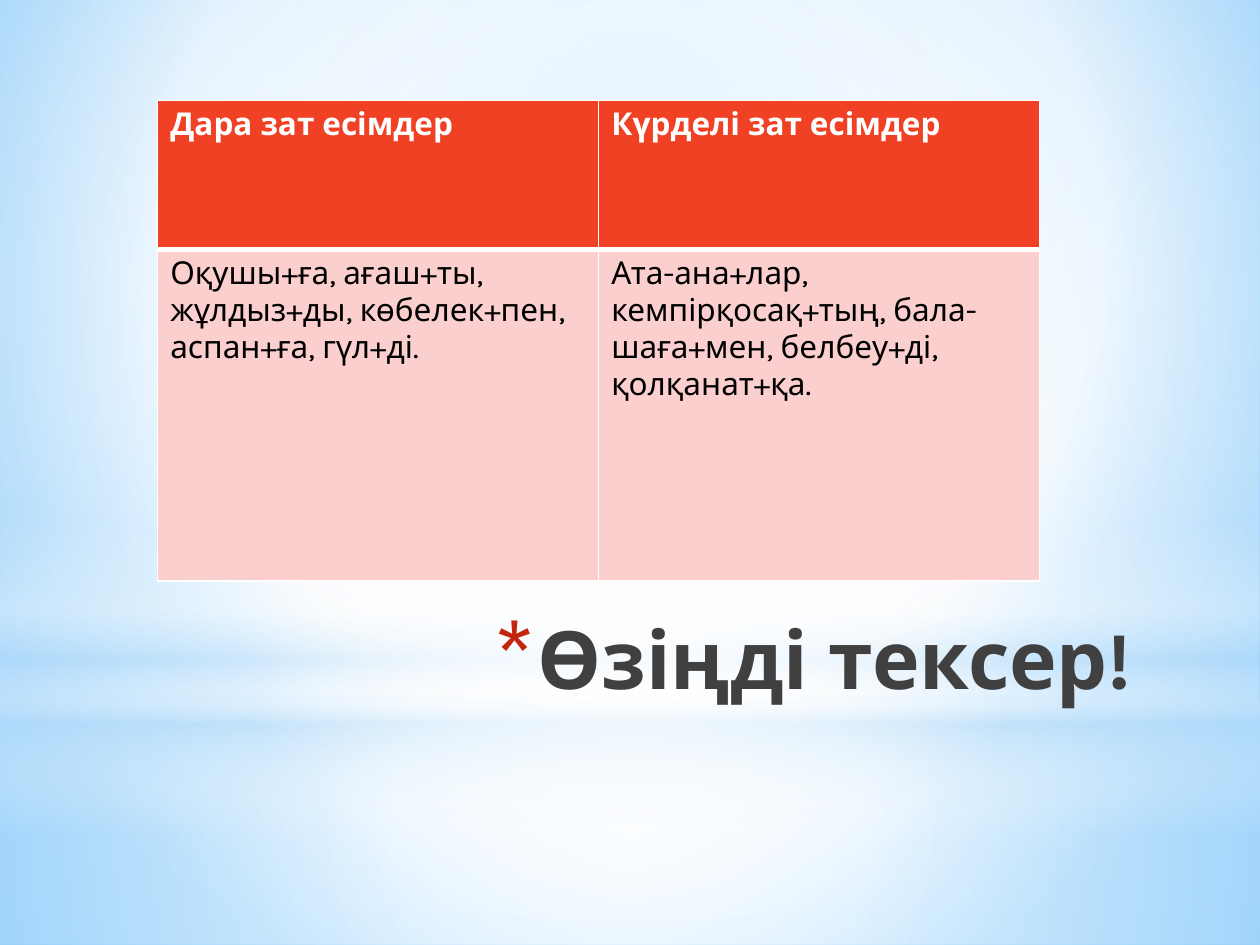
from lxml import etree
from pptx import Presentation
from pptx.dml.color import RGBColor
from pptx.enum import shapes, text
from pptx.oxml import parse_xml
from pptx.oxml.ns import nsdecls, qn
from pptx.util import Cm, Pt

TITLE = "Өзіңді тексер!"
ROWS = [
    ("Дара зат есімдер", "Күрделі зат есімдер"),
    ("Оқушы+ға, ағаш+ты, жұлдыз+ды, көбелек+пен, аспан+ға, гүл+ді.",
     "Ата-ана+лар, кемпірқосақ+тың, бала-шаға+мен, белбеу+ді, қолқанат+қа."),
]
THEME = {
    "font": "Karla", "title_size": 46, "table_size": 18,
    "title": "404040", "bullet": "C3260C", "border": "FFFFFF",
    "row_fill": ("F14124", "FACFCD"), "row_text": ("FFFFFF", "000000"),
}
CENTRE = (50, 50, 50, 50)
# Stops are (position %, colour, opacity %); no focus means a vertical gradient
BACKGROUND = [(0, "9ED5FF", 100), (60, "FFFFFF", 100), (100, "5BB9FF", 100)]
RECTANGLE, OVAL = shapes.MSO_SHAPE.RECTANGLE, shapes.MSO_SHAPE.OVAL
# Full-width bands: shape, top and height in cm, stops, focus
BANDS = [
    (RECTANGLE, 14.17, 4.88,
     [(0, "FFFFFF", 91), (37, "FFFFFF", 76), (100, "B4DCFA", 79)], CENTRE),
    (RECTANGLE, 0, 14.17,
     [(0, "FFFFFF", 89), (48, "FFFFFF", 62), (100, "B4DCFA", 79)], CENTRE),
    (RECTANGLE, 10.46, 6.35,
     [(0, "FFFFFF", 0), (29, "FFFFFF", 30), (45, "B4DCFA", 40),
      (55, "FFFFFF", 26), (65, "B4DCFA", 60), (100, "FFFFFF", 0)], None),
    (OVAL, 4.45, 14.17, [(0, "FFFFFF", 100), (56, "FFFFFF", 0)], CENTRE),
]


def set_gradient(fill, holder, stops, focus):
    """Fill the properties element holder with a gradient."""
    fill.solid()
    stop_xml = "".join(
        f'<a:gs pos="{position * 1000}"><a:srgbClr val="{colour}">'
        f'<a:alpha val="{opacity * 1000}"/></a:srgbClr></a:gs>'
        for position, colour, opacity in stops)
    if focus:
        edges = " ".join(f'{side}="{value * 1000}"' for side, value in zip("ltrb", focus))
        direction = f'<a:path path="circle"><a:fillToRect {edges}/></a:path>'
    else:
        direction = '<a:lin ang="5400000" scaled="0"/>'
    gradient = parse_xml(f'<a:gradFill {nsdecls("a")} rotWithShape="1">'
                         f'<a:gsLst>{stop_xml}</a:gsLst>{direction}</a:gradFill>')
    holder.replace(holder.find(qn("a:solidFill")), gradient)


def add_span(para, words, size, colour, bold):
    span = para.add_run()
    span.text = words
    span.font.name = THEME["font"]
    span.font.size = Pt(size)
    span.font.bold = bold
    span.font.color.rgb = RGBColor.from_string(colour)


def add_bands(page, width):
    for kind, top, height, stops, focus in BANDS:
        band = page.shapes.add_shape(kind, 0, Cm(top), width, Cm(height))
        band.shadow.inherit = False
        set_gradient(band.fill, band.element.spPr, stops, focus)
        band.line.fill.background()


def format_title(title):
    title.left, title.top, title.width, title.height = Cm(4.98), Cm(12.14), Cm(18.08), Cm(3.18)
    frame = title.text_frame
    frame.word_wrap = True
    frame.auto_size = text.MSO_AUTO_SIZE.NONE
    frame.vertical_anchor = text.MSO_ANCHOR.TOP
    para = frame.paragraphs[0]
    para.alignment = text.PP_ALIGN.RIGHT
    properties = para._p.get_or_add_pPr()
    properties.set("marL", str(Cm(0.89)))
    properties.set("indent", str(Cm(-0.89)))
    colour = etree.SubElement(properties, qn("a:buClr"))
    etree.SubElement(colour, qn("a:srgbClr"), val=THEME["bullet"])
    etree.SubElement(properties, qn("a:buSzPct"), val="128000")
    etree.SubElement(properties, qn("a:buFont"), typeface=THEME["font"])
    etree.SubElement(properties, qn("a:buChar"), char="*")
    add_span(para, TITLE, THEME["title_size"], THEME["title"], True)


def set_borders(cell, widths):
    """Draw the left, right, top and bottom borders, widths in points."""
    properties = cell._tc.get_or_add_tcPr()
    for index, (side, width) in enumerate(zip("LRTB", widths)):
        properties.insert(index, parse_xml(
            f'<a:ln{side} {nsdecls("a")} w="{Pt(width)}"><a:solidFill>'
            f'<a:srgbClr val="{THEME["border"]}"/></a:solidFill></a:ln{side}>'))


def add_word_table(page):
    heights = (Cm(3), Cm(6.68))
    table = page.shapes.add_table(len(ROWS), len(ROWS[0]), Cm(3.18), Cm(2.03),
                                  Cm(17.78), sum(heights)).table
    for r, words_in_row in enumerate(ROWS):
        table.rows[r].height = heights[r]
        for c, words in enumerate(words_in_row):
            cell = table.cell(r, c)
            cell.fill.solid()
            cell.fill.fore_color.rgb = RGBColor.from_string(THEME["row_fill"][r])
            set_borders(cell, (1, 1, 1, 3) if r == 0 else (1, 1, 3, 1))
            add_span(cell.text_frame.paragraphs[0], words, THEME["table_size"],
                     THEME["row_text"][r], r == 0)


def main():
    deck = Presentation()
    deck.slide_width, deck.slide_height = Cm(25.4), Cm(19.05)
    page = deck.slides.add_slide(deck.slide_layouts[5])
    backdrop = page.background.fill
    set_gradient(backdrop, page.element.find(".//" + qn("p:bgPr")),
                 BACKGROUND, (20, 10, 20, 60))
    add_bands(page, deck.slide_width)
    title = page.shapes.title
    title.element.getparent().append(title.element)  # bring in front of the bands
    format_title(title)
    add_word_table(page)
    deck.save("out.pptx")


if __name__ == "__main__":
    main()
